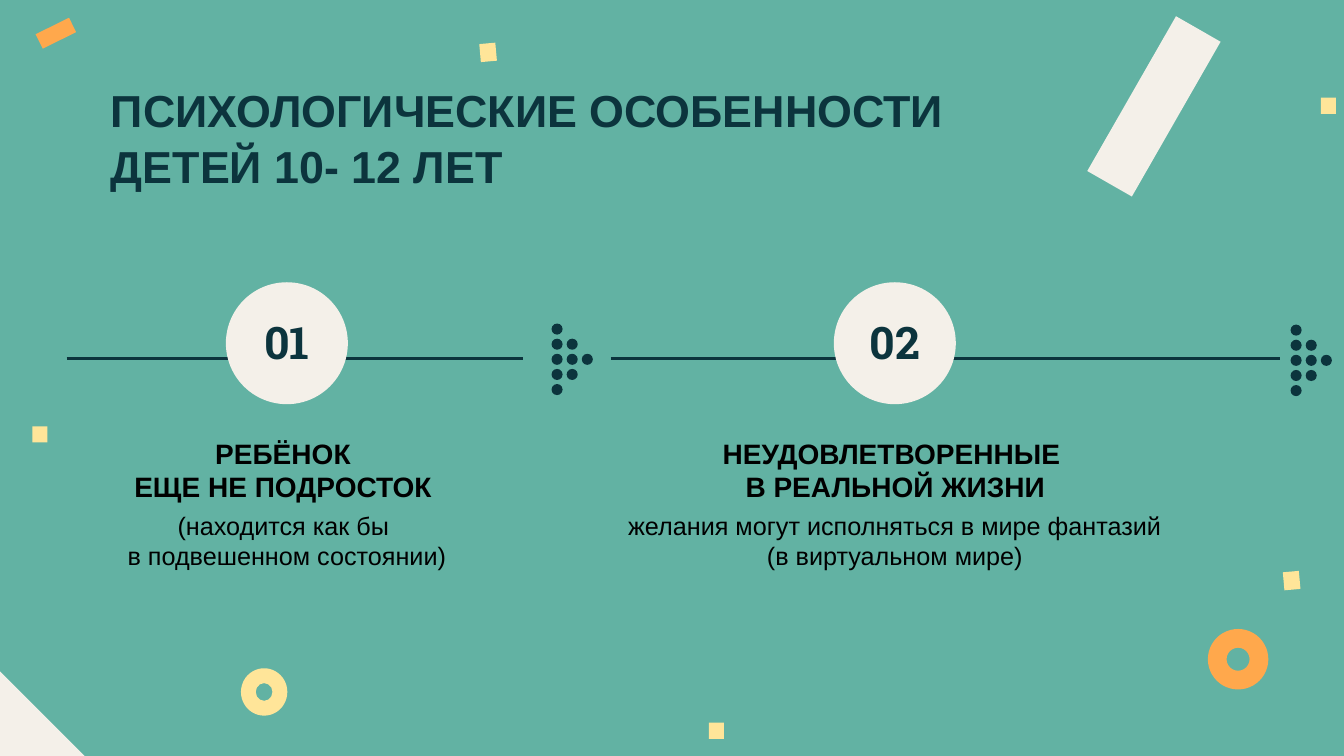
from pptx import Presentation
from pptx.dml.color import RGBColor
from pptx.enum.shapes import MSO_CONNECTOR, MSO_SHAPE
from pptx.enum.text import MSO_ANCHOR, PP_ALIGN
from pptx.oxml.ns import qn
from pptx.util import Inches, Pt

TEAL = RGBColor(0x62, 0xB2, 0xA3)
CREAM = RGBColor(0xF4, 0xF0, 0xE9)
ORANGE = RGBColor(0xFF, 0xA8, 0x4C)
YELLOW = RGBColor(0xFF, 0xE5, 0x99)
NAVY = RGBColor(0x0C, 0x34, 0x3D)
BLACK = RGBColor(0, 0, 0)

RECT, OVAL, DONUT = MSO_SHAPE.RECTANGLE, MSO_SHAPE.OVAL, MSO_SHAPE.DONUT
STRAIGHT = MSO_CONNECTOR.STRAIGHT
LEFT, CENTER = PP_ALIGN.LEFT, PP_ALIGN.CENTER
TOP, BOTTOM = MSO_ANCHOR.TOP, MSO_ANCHOR.BOTTOM

AXIS = 3.56  # height of the timeline
STEP = 0.15  # pitch of the dots in an arrow
DOT = 0.11


class Board:
    def __init__(self, slide):
        self.slide = slide
        self.shapes = slide.shapes
        slide.background.fill.solid()
        slide.background.fill.fore_color.rgb = TEAL

    def shape(self, kind, box, color, turn=0, ring=None):
        item = self.shapes.add_shape(kind, *map(Inches, box))
        item.shadow.inherit = False
        item.fill.solid()
        item.fill.fore_color.rgb = color
        item.line.fill.background()
        item.rotation = turn
        if ring:
            item.adjustments[0] = ring

    def line(self, start, end):
        item = self.shapes.add_connector(
            STRAIGHT, Inches(start), Inches(AXIS), Inches(end), Inches(AXIS))
        item.line.color.rgb = NAVY
        item.line.width = Pt(2.25)
        props = item._element.spPr
        props.append(props.makeelement(qn("a:effectLst"), {}))

    def text(self, box, words, size, color=BLACK, bold=False, font="Arial",
             align=CENTER, anchor=TOP, inset=None, wrap=True, space=None):
        frame = self.shapes.add_textbox(*map(Inches, box)).text_frame
        frame.word_wrap = wrap
        frame.vertical_anchor = anchor
        if inset:
            frame.margin_left = frame.margin_right = Inches(inset)
            frame.margin_top = frame.margin_bottom = Inches(inset)
        frame.text = words
        for para in frame.paragraphs:
            para.alignment = align
            para.line_spacing = space
            for run in para.runs:
                run.font.name = font
                run.font.size = Pt(size)
                run.font.bold = bold
                run.font.color.rgb = color

    def arrow(self, left, top):
        """Draw a triangle of dots that points right."""
        for col in range(3):
            for row in range(col, 5 - col):
                spot = (left + col * STEP, top + row * STEP, DOT, DOT)
                self.shape(OVAL, spot, NAVY)

    def badge(self, left, label):
        self.shape(OVAL, (left, 2.8, 1.21, 1.21), CREAM)
        self.text((left + 0.17, 3.02, 0.87, 0.77), label, 32, NAVY, True,
                  "Roboto Slab", anchor=BOTTOM, inset=0.13)


def decor(board):
    board.shape(RECT, (11.19, 0.17, 0.51, 1.77), CREAM, 209.8)
    board.shape(RECT, (0.37, 0.25, 0.37, 0.16), ORANGE, 333.7)
    board.shape(RECT, (-0.17, 6.69, 0.9, 1.77), CREAM, 315)
    board.shape(DONUT, (11.98, 6.24, 0.6, 0.6), ORANGE, ring=0.31)
    board.shape(DONUT, (2.39, 6.63, 0.46, 0.47), YELLOW, ring=0.32)
    for left, top in ((0.32, 4.23), (13.1, 0.97), (7.03, 7.17)):
        board.shape(RECT, (left, top, 0.15, 0.16), YELLOW)
    for left, top in ((4.75, 0.44), (12.72, 5.68)):
        board.shape(RECT, (left, top, 0.18, 0.16), YELLOW, 84.9)


# label, badge left, line ends, arrow place, head box, head, note box, note
STAGES = (
    ("01", 2.24, (0.66, 5.19), (5.47, 3.21),
     (1.17, 4.28, 3.35, 0.77), "РЕБЁНОК \nЕЩЕ НЕ ПОДРОСТОК ",
     (0.7, 5.01, 4.29, 0.71), "(находится как бы \nв подвешенном состоянии)"),
    ("02", 8.27, (6.06, 12.7), (12.8, 3.22),
     (6.23, 4.28, 5.3, 0.77), "НЕУДОВЛЕТВОРЕННЫЕ \nВ РЕАЛЬНОЙ ЖИЗНИ",
     (6.09, 5.01, 5.57, 0.71),
     "желания могут исполняться в мире фантазий (в виртуальном мире)"),
)


def main():
    deck = Presentation()
    deck.slide_width, deck.slide_height = Inches(13.33), Inches(7.5)
    board = Board(deck.slides.add_slide(deck.slide_layouts[6]))
    decor(board)
    board.text((0.97, 0.66, 9.9, 0.84),
               "ПСИХОЛОГИЧЕСКИЕ ОСОБЕННОСТИ ДЕТЕЙ 10- 12 ЛЕТ",
               32, NAVY, True, align=LEFT, inset=0.13, space=1.05)
    for label, left, ends, tip, head_box, head, note_box, note in STAGES:
        board.line(*ends)
        board.badge(left, label)
        board.arrow(*tip)
        board.text(head_box, head, 20, bold=True, wrap=label != "01")
        board.text(note_box, note, 18)
    deck.save("out.pptx")


if __name__ == "__main__":
    main()
